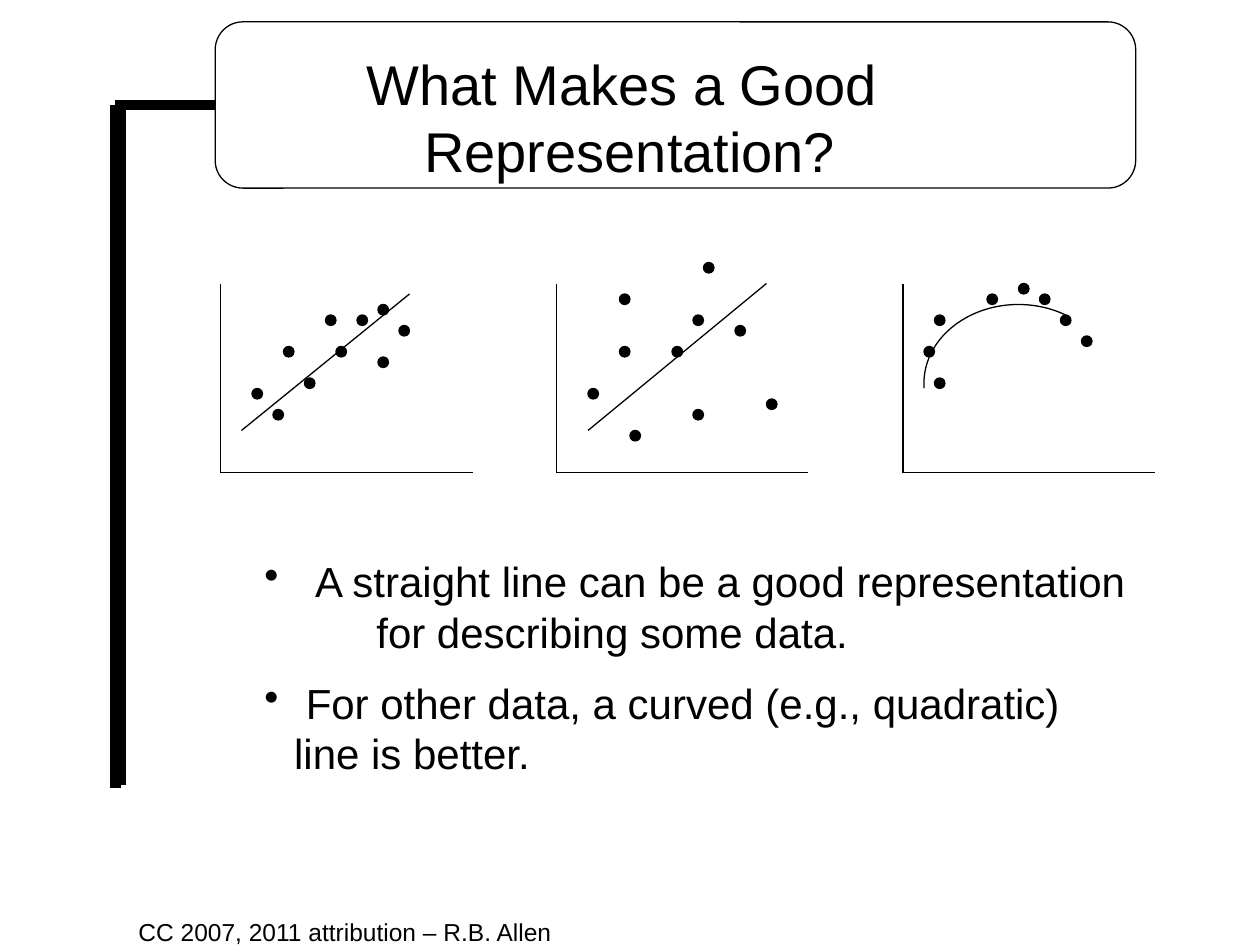
"""Build a slide comparing straight and curved lines as representations of data."""
from dataclasses import dataclass

from lxml.etree import SubElement
from pptx import Presentation
from pptx.dml.color import RGBColor
from pptx.enum.shapes import MSO_CONNECTOR, MSO_SHAPE
from pptx.enum.text import MSO_ANCHOR, PP_ALIGN
from pptx.oxml.ns import qn
from pptx.util import Pt


@dataclass(frozen=True)
class Theme:
    ink: RGBColor = RGBColor(0, 0, 0)
    font: str = "Arial"
    title: int = 32
    body: int = 24
    footer: int = 14
    thin: float = 0.75
    thick: float = 6


theme = Theme()
grid = 6

presentation = Presentation()
presentation.slide_width = Pt(720)
presentation.slide_height = Pt(540)
slide = presentation.slides.add_slide(presentation.slide_layouts[6])


def add_line(x1, y1, x2, y2, weight=theme.thin):
    line = slide.shapes.add_connector(MSO_CONNECTOR.STRAIGHT, Pt(x1), Pt(y1), Pt(x2), Pt(y2))
    line.line.color.rgb = theme.ink
    line.line.width = Pt(weight)
    SubElement(line._element.spPr, qn("a:effectLst"))


def add_text(left, top, width, height, lines, size):
    box = slide.shapes.add_textbox(Pt(left), Pt(top), Pt(width), Pt(height))
    frame = box.text_frame
    frame.word_wrap = True
    frame.text = "\n".join(lines)
    for paragraph in frame.paragraphs:
        for run in paragraph.runs:
            run.font.name = theme.font
            run.font.size = Pt(size)
            run.font.color.rgb = theme.ink
    return frame


for x1, y1, x2, y2 in [(69, 448.5, 69, 59), (66, 60, 123, 60), (66, 450, 66, 60)]:
    add_line(x1, y1, x2, y2, theme.thick)

title_frame = slide.shapes.add_shape(
    MSO_SHAPE.FLOWCHART_ALTERNATE_PROCESS, Pt(123), Pt(12.5), Pt(526), Pt(95)
)
title_frame.shadow.inherit = False
title_frame.fill.background()
title_frame.line.color.rgb = theme.ink
title_frame.line.width = Pt(theme.thin)

title = add_text(36, 21.6, 648, 90, ["What Makes a Good \vRepresentation?"], theme.title)
title.vertical_anchor = MSO_ANCHOR.MIDDLE
title.paragraphs[0].alignment = PP_ALIGN.CENTER

add_text(72, 520.5, 450, 19.5, ["CC 2007, 2011 attribution – R.B. Allen"], theme.footer)

plots = [
    (126, (2, 14, 18, 1), [(3, 10), (5, 12), (8, 9), (17, 4), (10, 3),
                           (15, 2), (15, 7), (13, 3), (11, 6), (6, 6)]),
    (318, (3, 14, 20, 0), [(3, 10), (7, 14), (13, 12), (17, 4), (6, 1),
                           (14, -2), (20, 11), (13, 3), (11, 6), (6, 6)]),
    (516, None, [(17, 5), (3, 3), (2, 6), (11, 0), (3, 9), (8, 1), (13, 1), (15, 3)]),
]
plot_top, plot_bottom, plot_width = 162, 270, 144

for plot_left, trend, points in plots:
    add_line(plot_left, plot_top, plot_left, plot_bottom)
    add_line(plot_left, plot_bottom, plot_left + plot_width, plot_bottom)
    if trend:
        x1, y1, x2, y2 = [grid * step for step in trend]
        add_line(plot_left + x1, plot_top + y1, plot_left + x2, plot_top + y2)
    else:
        curve = slide.shapes.add_shape(
            MSO_SHAPE.ARC, Pt(plot_left + 2 * grid), Pt(plot_top + 2 * grid), Pt(108), Pt(90)
        )
        curve.shadow.inherit = False
        curve.adjustments[0] = 177 * 0.6
        curve.adjustments[1] = 305 * 0.6
        curve.fill.background()
        curve.line.color.rgb = theme.ink
        curve.line.width = Pt(theme.thin)
    for column, row in points:
        dot = slide.shapes.add_shape(
            MSO_SHAPE.OVAL, Pt(plot_left + grid * column), Pt(plot_top + grid * row),
            Pt(grid), Pt(grid)
        )
        dot.shadow.inherit = False
        dot.fill.solid()
        dot.fill.fore_color.rgb = theme.ink
        dot.line.color.rgb = theme.ink
        dot.line.width = Pt(theme.thin)

body_lines = [
    "A straight line can be a good representation",
    "for describing some data.",
    " For other data, a curved (e.g., quadratic) line is better.",
]
body = add_text(144, 314, 510, 138, body_lines, theme.body)
for paragraph, margin, bulleted, space in zip(
    body.paragraphs, (29, 64, 17), (True, False, True), (0, 0, 12)
):
    paragraph.space_before = Pt(space)
    properties = paragraph._p.get_or_add_pPr()
    properties.set("marL", str(Pt(margin)))
    properties.set("indent", str(Pt(-margin if bulleted else 0)))
    if bulleted:
        SubElement(properties, qn("a:buChar"), char="•")

presentation.save("out.pptx")
